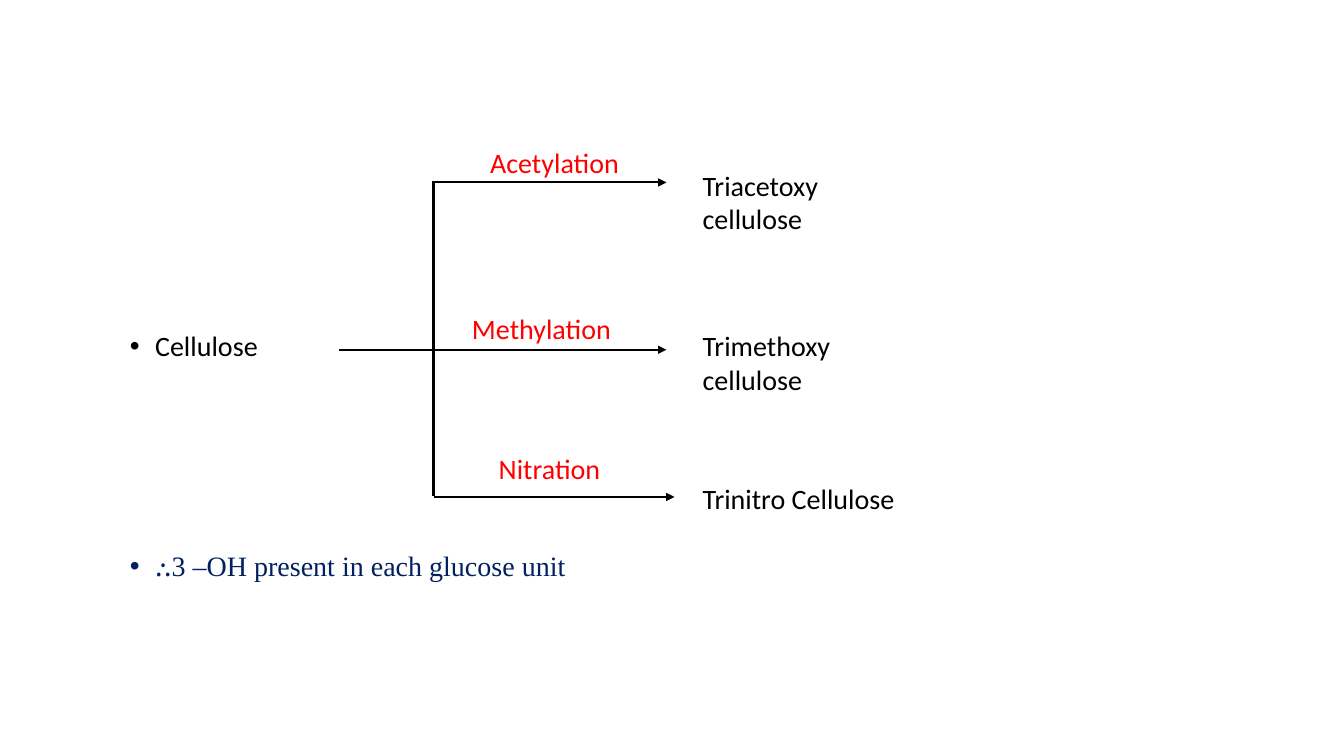
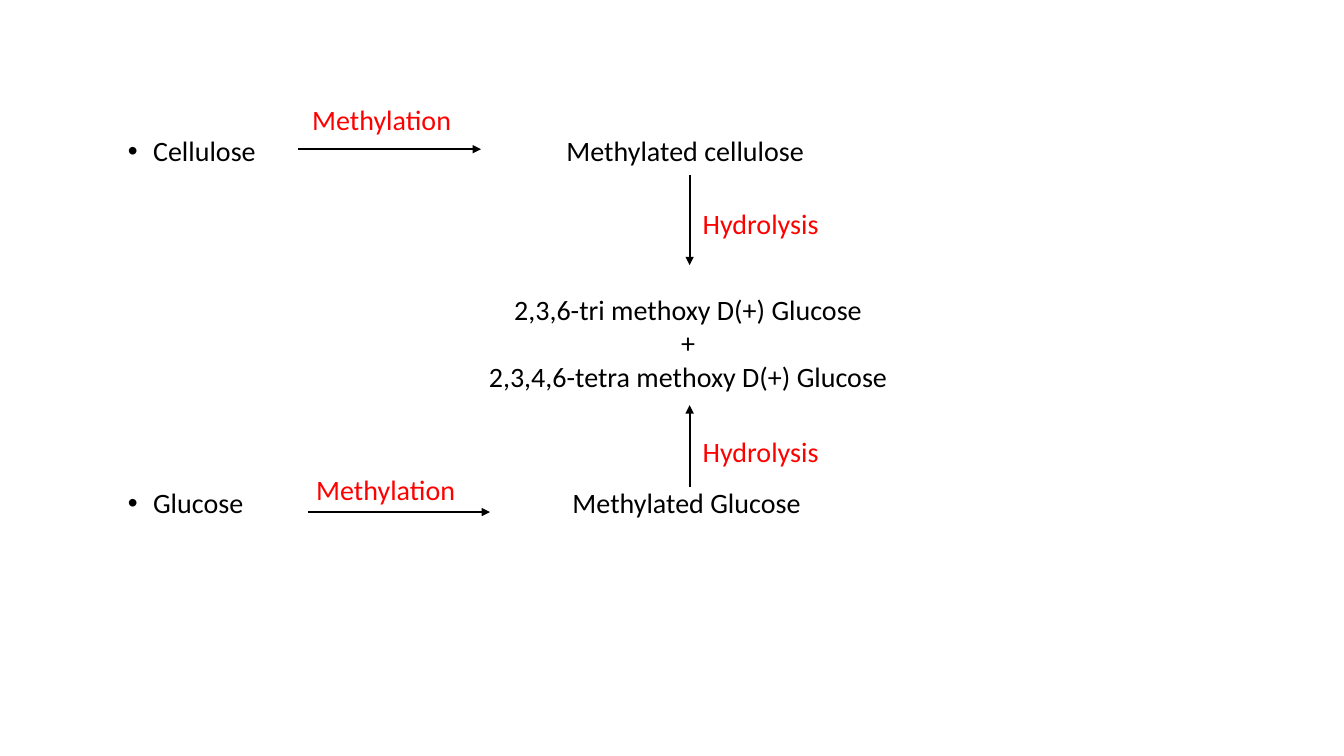
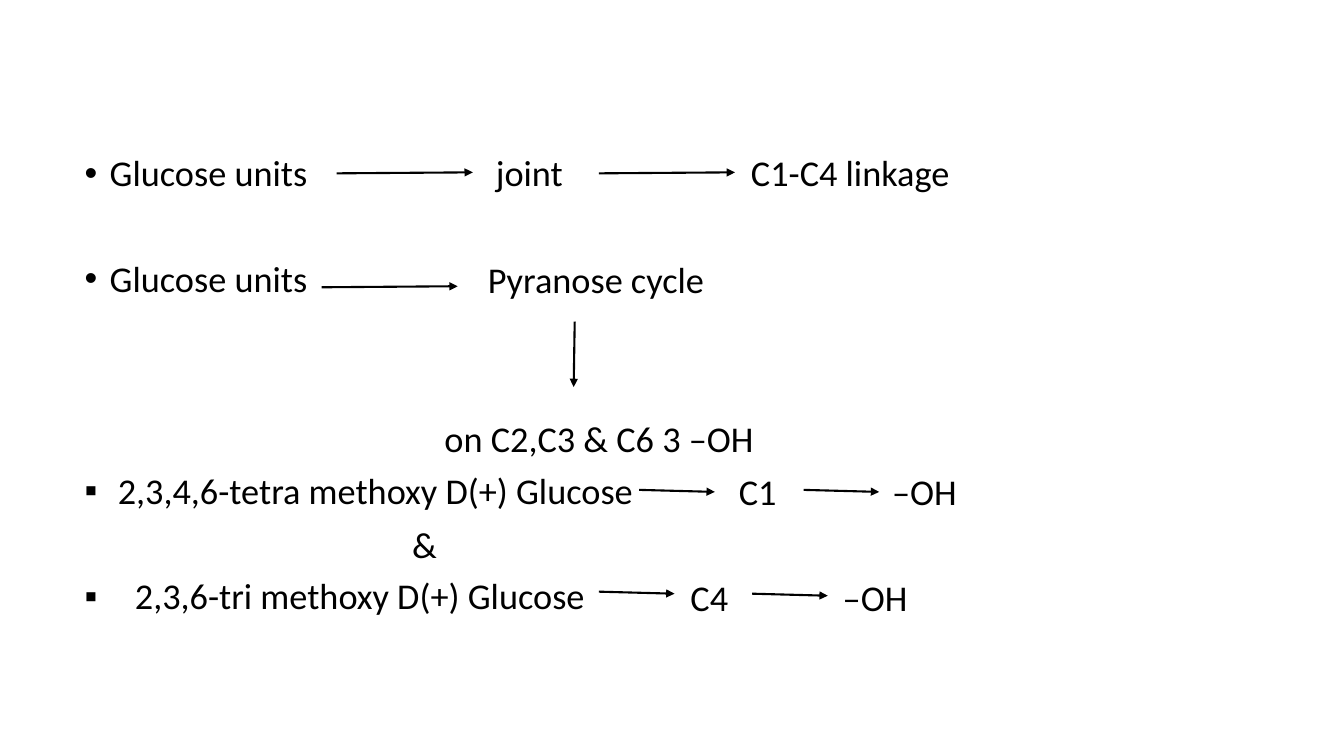
from dataclasses import dataclass

from lxml import etree
from pptx import Presentation
from pptx.dml.color import RGBColor
from pptx.enum.shapes import MSO_CONNECTOR as Connector
from pptx.enum.text import PP_ALIGN as Align
from pptx.oxml.ns import qn
from pptx.util import Inches, Pt


@dataclass(frozen=True)
class Theme:
    ink: RGBColor = RGBColor(0x00, 0x00, 0x00)
    reagent: RGBColor = RGBColor(0xFF, 0x00, 0x00)
    conclusion: RGBColor = RGBColor(0x00, 0x20, 0x60)
    font: str = "Calibri"
    serif: str = "Times New Roman"
    size: float = 20
    large: float = 25.9
    line: float = 1.5
    tight: float = 0.9   # line spacing of list rows
    gap: float = 9.5     # points between list rows


THEME = Theme()


def row_pitch(size):
    """Points from one list row to the next."""
    return size * 1.1 + THEME.gap


def row_top(top, row, size):
    """Top in inches of a text box level with a list row."""
    return round(top + row * row_pitch(size) / 72, 2)


# Text
def style(paragraph, size, color=THEME.ink, font=THEME.font):
    for run in paragraph.runs:
        run.font.size = Pt(size)
        run.font.color.rgb = color
        run.font.name = font


def text_frame(slide, left, top, width, height):
    box = slide.shapes.add_textbox(Inches(left), Inches(top), Inches(width), Inches(height))
    box.text_frame.word_wrap = True
    return box.text_frame


def label(slide, text, left, top, width, color=THEME.ink, align=Align.LEFT,
          size=THEME.size, spacing=1.0):
    height = 0.1 + (text.count("\n") + 1) * size * 1.22 / 72
    frame = text_frame(slide, left, top, width, round(height, 2))
    frame.text = text
    for paragraph in frame.paragraphs:
        paragraph.alignment = align
        paragraph.line_spacing = spacing
        style(paragraph, size, color)


def reagent(slide, text, left, top, width, align=Align.CENTER):
    label(slide, text, left, top, width, THEME.reagent, align)


def set_bullet(paragraph, char, hang):
    props = paragraph._p.get_or_add_pPr()
    props.set("marL", str(Inches(hang)))
    props.set("indent", str(-Inches(hang)))
    etree.SubElement(props, qn("a:buFont")).set("typeface", "Arial")
    etree.SubElement(props, qn("a:buChar")).set("char", char)


def bullet_list(slide, left, top, width, rows, size=THEME.size):
    """Each entry of rows is (row number, text, bullet, hanging indent)."""
    height = round((rows[-1][0] + 1) * row_pitch(size) / 72, 2)
    frame = text_frame(slide, left, top, width, height)
    previous = 0
    for index, (row, text, char, hang) in enumerate(rows):
        paragraph = frame.add_paragraph() if index else frame.paragraphs[0]
        paragraph.text = text
        paragraph.line_spacing = THEME.tight
        if index:
            skipped = row - previous - 1
            paragraph.space_before = Pt(THEME.gap + skipped * row_pitch(size))
        set_bullet(paragraph, char, hang)
        style(paragraph, size)
        previous = row
    return frame


# Lines
def line(slide, start, end, arrow=True):
    ends = [Inches(value) for value in (*start, *end)]
    connector = slide.shapes.add_connector(Connector.STRAIGHT, *ends)
    connector.line.color.rgb = THEME.ink
    connector.line.width = Pt(THEME.line)
    if arrow:
        etree.SubElement(connector.line._get_or_add_ln(), qn("a:tailEnd")).set("type", "triangle")
    etree.SubElement(connector._element.spPr, qn("a:effectLst"))


# Slides
def hydroxyl_slide(slide):
    rows = [(0, "Cellulose", "•", 0.25),
            (5, "⸫3 –OH present in each glucose unit", "•", 0.25)]
    notes = bullet_list(slide, 1.19, 3.25, 5.4, rows)
    style(notes.paragraphs[1], THEME.size, THEME.conclusion, THEME.serif)

    # Stem and trunk
    trunk = 4.3
    line(slide, (3.36, 3.47), (trunk, 3.47), arrow=False)
    line(slide, (trunk, 1.8), (trunk, 4.92), arrow=False)

    # Branches: arrow height and tip, reaction, product
    branches = [
        (1.81, 6.61, ("Acetylation", 4.56, 1.39), ("Triacetoxy cellulose", 1.62, 1.6)),
        (3.47, 6.61, ("Methylation", 4.43, 3.04), ("Trimethoxy cellulose", 3.21, 1.6)),
        (4.93, 6.69, ("Nitration", 4.51, 4.43), ("Trinitro Cellulose", 4.73, 2.78)),
    ]
    for y, tip, (reaction, left, top), (product, product_top, width) in branches:
        line(slide, (trunk, y), (tip, y))
        reagent(slide, reaction, left, top, 1.88)
        label(slide, product, 6.87, product_top, width)


def methylation_slide(slide):
    top = 1.31
    bullet_list(slide, 1.17, top, 1.7,
                [(0, "Cellulose", "•", 0.25), (8, "Glucose", "•", 0.25)])

    # Methylation: row, product, its left, arrow start and height, reagent place
    steps = [(0, "Methylated cellulose", 5.52, 2.96, 1.48, 2.88, 0.97),
             (8, "Methylated Glucose", 5.58, 3.05, 5.08, 2.92, 4.64)]
    for row, product, left, start, y, reagent_left, reagent_top in steps:
        label(slide, product, left, row_top(top, row, THEME.size), 2.7, spacing=THEME.tight)
        line(slide, (start, y), (start + 1.81, y))
        reagent(slide, "Methylation", reagent_left, reagent_top, 1.81)

    # Hydrolysis from both sides
    for start, end, reagent_top in [(1.74, 2.63, 2), (4.83, 4.02, 4.26)]:
        line(slide, (6.84, start), (6.84, end))
        reagent(slide, "Hydrolysis", 6.87, reagent_top, 1.56, Align.LEFT)
    label(slide, "2,3,6-tri methoxy D(+) Glucose\n+\n2,3,4,6-tetra methoxy D(+) Glucose",
          4.46, 2.85, 4.73, align=Align.CENTER)


def linkage_slide(slide):
    top = 1.49
    rows = [(0, "Glucose units", "•", 0.25),
            (2, "Glucose units", "•", 0.25),
            (6, "2,3,4,6-tetra methoxy D(+) Glucose", "▪", 0.33),
            (8, "2,3,6-tri methoxy D(+) Glucose", "▪", 0.5)]
    bullet_list(slide, 0.74, top, 5.8, rows, THEME.large)

    # Findings: row, text, left, width
    findings = [(0, "joint", 4.82, 1.1), (0, "C1-C4 linkage", 7.35, 2.6),
                (2, "Pyranose cycle", 4.74, 2.8),
                (5, "on C2,C3 & C6 3 –OH", 4.31, 3.6),
                (6, "C1", 7.23, 0.7), (6, "–OH", 8.75, 1),
                (7, "&", 3.99, 0.6),
                (8, "C4", 6.75, 0.7), (8, "–OH", 8.26, 1)]
    for row, text, left, width in findings:
        label(slide, text, left, row_top(top, row, THEME.large), width,
              size=THEME.large, spacing=THEME.tight)

    # Arrows: start, horizontal run, vertical run
    arrows = [(3.34, 1.72, 1.35, -0.01), (5.94, 1.72, 1.35, -0.01),
              (3.19, 2.85, 1.35, -0.01), (5.7, 3.19, -0.01, 0.65),
              (6.34, 4.86, 0.75, 0.02), (7.97, 4.86, 0.75, 0.02),
              (5.94, 5.87, 0.75, 0.02), (7.46, 5.89, 0.75, 0.02)]
    for x, y, across, down in arrows:
        line(slide, (x, y), (x + across, y + down))


def main():
    deck = Presentation()
    deck.slide_width = Inches(13.33)
    deck.slide_height = Inches(7.5)
    blank = deck.slide_layouts[6]
    for build in (hydroxyl_slide, methylation_slide, linkage_slide):
        build(deck.slides.add_slide(blank))
    deck.save("out.pptx")


if __name__ == "__main__":
    main()
